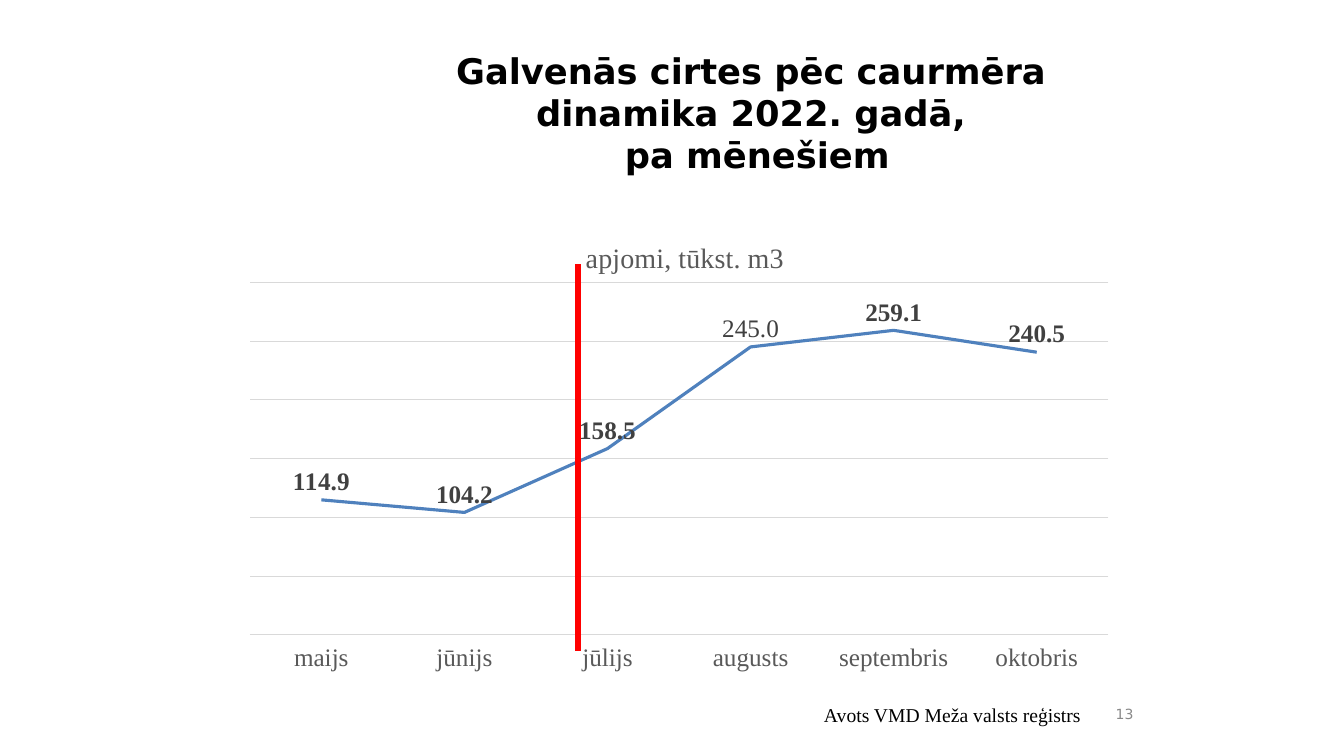
"""Build the slide on monthly felling volumes by diameter in 2022."""
from dataclasses import dataclass

from lxml import etree
from pptx import Presentation
from pptx.chart.data import CategoryChartData
from pptx.dml.color import RGBColor
from pptx.enum.chart import XL_CHART_TYPE, XL_LABEL_POSITION, XL_TICK_LABEL_POSITION, XL_TICK_MARK
from pptx.enum.shapes import MSO_CONNECTOR
from pptx.enum.text import MSO_ANCHOR, PP_ALIGN
from pptx.oxml.ns import qn
from pptx.util import Inches, Pt

LINE = XL_CHART_TYPE.LINE
ABOVE = XL_LABEL_POSITION.ABOVE
LOW = XL_TICK_LABEL_POSITION.LOW
NO_TICK = XL_TICK_MARK.NONE
STRAIGHT = MSO_CONNECTOR.STRAIGHT
MIDDLE, TOP = MSO_ANCHOR.MIDDLE, MSO_ANCHOR.TOP
CENTER, RIGHT = PP_ALIGN.CENTER, PP_ALIGN.RIGHT


@dataclass(frozen=True)
class Theme:
    """Colours, fonts and type sizes of the slide."""
    sans: str = "DejaVu Sans"
    serif: str = "Times New Roman"
    black: str = "000000"
    label: str = "404040"
    axis: str = "595959"
    page: str = "898989"
    grid: str = "D9D9D9"
    blue: str = "4F81BD"
    red: str = "FF0000"
    head: float = 25.2
    title: float = 20
    value: float = 18
    note: float = 14
    small: float = 10


THEME = Theme()


@dataclass(frozen=True)
class Box:
    """A place on the slide in inches."""
    left: float
    top: float
    width: float
    height: float

    def spot(self) -> tuple:
        """Give the place as lengths."""
        return tuple(Inches(n) for n in (self.left, self.top, self.width, self.height))


@dataclass(frozen=True)
class Note:
    """A small right-aligned text at the foot."""
    text: str
    box: Box
    face: str
    size: float
    color: str
    anchor: MSO_ANCHOR


NOTES = (
    Note("13", Box(10.83, 6.92, 0.51, 0.33), THEME.sans, THEME.small, THEME.page, MIDDLE),
    Note("Avots VMD Meža valsts reģistrs", Box(7.12, 6.92, 3.7, 0.34),
         THEME.serif, THEME.note, THEME.black, TOP),
)
MONTHS = ("maijs", "jūnijs", "jūlijs", "augusts", "septembris", "oktobris")
VOLUMES = (114.9, 104.2, 158.5, 245.0, 259.1, 240.5)
PLAIN = 3


def style(font, face: str, size: float, color: str, bold: bool = False) -> None:
    """Format a font."""
    font.name, font.size, font.bold = face, Pt(size), bold
    font.color.rgb = RGBColor.from_string(color)


def stroke(line, color: str, width: float) -> None:
    """Format a line."""
    line.color.rgb = RGBColor.from_string(color)
    line.width = Pt(width)


def place(node, index: int, **parts: float) -> None:
    """Fix the layout of a chart part as shares of the chart."""
    for old in node.findall(qn("c:layout")):
        node.remove(old)
    layout = etree.Element(qn("c:layout"))
    manual = etree.SubElement(layout, qn("c:manualLayout"))
    if "w" in parts:
        etree.SubElement(manual, qn("c:layoutTarget")).set("val", "inner")
    for tag in ("xMode", "yMode"):
        etree.SubElement(manual, qn(f"c:{tag}")).set("val", "edge")
    for tag, share in parts.items():
        etree.SubElement(manual, qn(f"c:{tag}")).set("val", str(share))
    node.insert(index, layout)


def add_head(slide) -> None:
    """Fill the title."""
    head = slide.shapes.title
    head.left, head.top, head.width, head.height = Box(3.74, 0.42, 7.42, 1.39).spot()
    frame = head.text_frame
    frame.text = "Galvenās cirtes pēc caurmēra dinamika 2022. gadā,\v pa mēnešiem"
    frame.vertical_anchor = MIDDLE
    para = frame.paragraphs[0]
    para.alignment = CENTER
    for run in para.runs:
        style(run.font, THEME.sans, THEME.head, THEME.black, True)


def add_note(slide, note: Note) -> None:
    """Draw a foot text."""
    frame = slide.shapes.add_textbox(*note.box.spot()).text_frame
    frame.word_wrap = True
    frame.vertical_anchor = note.anchor
    frame.text = note.text
    para = frame.paragraphs[0]
    para.alignment = RIGHT
    style(para.runs[0].font, note.face, note.size, note.color)


def add_graph(slide) -> None:
    """Draw the line chart."""
    data = CategoryChartData(number_format="0.0")
    data.categories = MONTHS
    data.add_series("Series 1", VOLUMES)
    chart = slide.shapes.add_chart(LINE, *Box(2.3, 2.15, 8.87, 4.55).spot(), data).chart
    style(chart.font, THEME.serif, THEME.small, THEME.black)
    chart.has_legend = False

    title = chart.chart_title
    title.text_frame.text = "apjomi, tūkst. m3"
    style(title.text_frame.paragraphs[0].runs[0].font, THEME.serif, THEME.title, THEME.axis)
    title.include_in_layout = False
    place(title._element, 1, x=0.39, y=0.04)
    place(chart._chartSpace.chart.plotArea, 0, x=0.02, y=0.143, w=0.96, h=0.769)

    months = chart.category_axis
    months.major_tick_mark = months.minor_tick_mark = NO_TICK
    months.tick_label_position = LOW
    style(months.tick_labels.font, THEME.serif, THEME.value, THEME.axis)
    stroke(months.format.line, THEME.grid, 0.75)

    scale = chart.value_axis
    scale.minimum_scale, scale.maximum_scale, scale.major_unit = 0, 300, 50
    scale.has_major_gridlines = True
    stroke(scale.major_gridlines.format.line, THEME.grid, 0.75)
    scale.visible = False

    plot = chart.plots[0]
    plot.vary_by_categories = False
    series = plot.series[0]
    series.smooth = False
    stroke(series.format.line, THEME.blue, 2.25)
    labels = series.data_labels
    labels.show_value = True
    labels.position = ABOVE
    labels.number_format, labels.number_format_is_linked = "0.0", False
    style(labels.font, THEME.serif, THEME.value, THEME.label, True)

    label = series.points[PLAIN].data_label
    label.text_frame.text = f"{VOLUMES[PLAIN]:.1f}"
    style(label.text_frame.paragraphs[0].runs[0].font, THEME.serif, THEME.value, THEME.label)
    label.position = ABOVE


def add_mark(slide) -> None:
    """Draw the red line between June and July."""
    ends = (Inches(n) for n in (5.73, 2.62, 5.73, 6.46))
    mark = slide.shapes.add_connector(STRAIGHT, *ends)
    stroke(mark.line, THEME.red, 4)
    etree.SubElement(mark._element.spPr, qn("a:effectLst"))


def main() -> None:
    """Build and save the deck."""
    deck = Presentation()
    deck.slide_width, deck.slide_height = Inches(13.33), Inches(7.5)
    slide = deck.slides.add_slide(deck.slide_layouts[5])
    add_head(slide)
    add_graph(slide)
    add_mark(slide)
    for note in NOTES:
        add_note(slide, note)
    deck.save("out.pptx")


if __name__ == "__main__":
    main()
